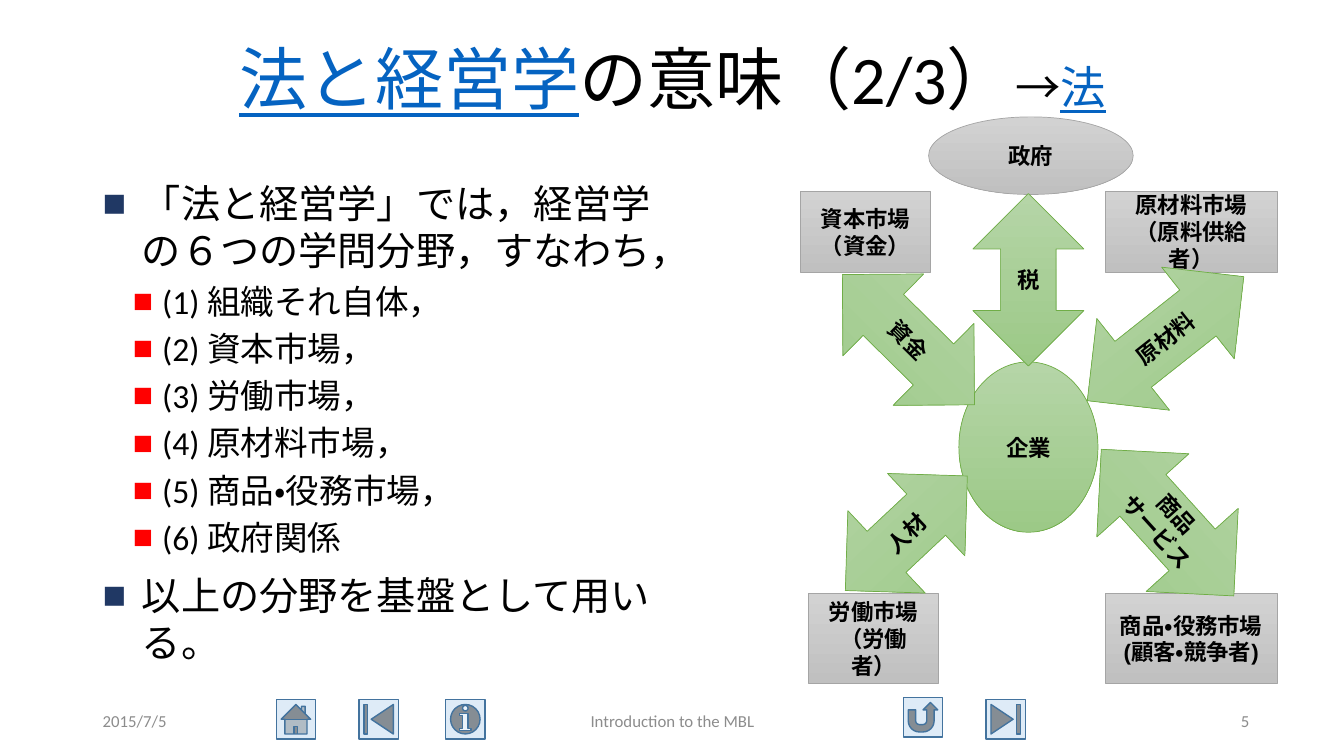
import pptx
import pptx.util
import pptx.dml.color
import pptx.enum.shapes
import pptx.enum.text
import pptx.enum.lang
import lxml.etree

RGBColor = pptx.dml.color.RGBColor
Shape = pptx.enum.shapes.MSO_SHAPE
Align = pptx.enum.text.PP_ALIGN

BLACK = RGBColor(0x00, 0x00, 0x00)
LINK_BLUE = RGBColor(0x05, 0x63, 0xC1)
FOOTER_GRAY = RGBColor(0x8C, 0x8C, 0x8C)
NAVY = RGBColor(0x20, 0x38, 0x64)
RED = RGBColor(0xFF, 0x00, 0x00)
BUTTON_FILL = RGBColor(0xDE, 0xEB, 0xF7)
BUTTON_LINE = RGBColor(0x43, 0x73, 0x9E)
# Top colour, bottom colour, outline
GRAY = (RGBColor(0xD2, 0xD2, 0xD2), RGBColor(0xC0, 0xC0, 0xC0), RGBColor(0xA5, 0xA5, 0xA5))
GREEN = (RGBColor(0xB5, 0xD5, 0xA7), RGBColor(0x9C, 0xC9, 0x87), RGBColor(0x70, 0xAD, 0x47))


class Board:
    """Style and current slide; places are in grid columns and rows."""

    cell = pptx.util.Inches(0.1)
    text_font = "Calibri"
    label_font = "Arial"

    def __init__(self, page):
        self.page = page

    def area(self, *places):
        return [round(place * self.cell) for place in places]

    def style(self, span, size, color=BLACK, name=None, bold=None):
        span.font.size = pptx.util.Pt(size)
        span.font.name = name or self.text_font
        span.font.color.rgb = color
        span.font.bold = bold
        span.font.language_id = pptx.enum.lang.MSO_LANGUAGE_ID.JAPANESE

    def text(self, place, anchor=pptx.enum.text.MSO_ANCHOR.MIDDLE):
        frame = self.page.shapes.add_textbox(*self.area(*place)).text_frame
        frame.word_wrap = True
        frame.vertical_anchor = anchor
        return frame

    def title(self, place, spans):
        para = self.text(place).paragraphs[0]
        para.alignment = Align.CENTER
        para.line_spacing = 0.9
        for words, size, linked in spans:
            span = para.add_run()
            span.text = words
            self.style(span, size, LINK_BLUE if linked else BLACK)
            span.font.underline = linked

    def footer(self, place, words, align):
        para = self.text(place).paragraphs[0]
        para.text = words
        para.alignment = align
        self.style(para.runs[0], 12, FOOTER_GRAY)

    def bullets(self, place, items):
        frame = self.text(place, pptx.enum.text.MSO_ANCHOR.TOP)
        frame.text = "\n".join(words for level, words in items)
        for para, (level, words) in zip(frame.paragraphs, items):
            size, before, margin, hang, color = (
                (24, 5, 5.9, 2.9, RED) if level else (28, 10, 3.9, 3.9, NAVY))
            para.level = level
            para.space_before = pptx.util.Pt(before)
            self.style(para.runs[0], size)
            self.bullet(para, margin, hang, color)

    def bullet(self, para, margin, hang, color):
        props = para._p.get_or_add_pPr()
        left, indent = self.area(margin, -hang)
        props.set("marL", str(left))
        props.set("indent", str(indent))
        tag = pptx.oxml.ns.qn
        holder = lxml.etree.SubElement(props, tag("a:buClr"))
        lxml.etree.SubElement(holder, tag("a:srgbClr")).set("val", str(color))
        lxml.etree.SubElement(props, tag("a:buFont")).set("typeface", self.label_font)
        lxml.etree.SubElement(props, tag("a:buChar")).set("char", "■")

    def shape(self, kind, place, line_color, line_width):
        box = self.page.shapes.add_shape(kind, *self.area(*place))
        box.shadow.inherit = False
        box.line.color.rgb = line_color
        box.line.width = pptx.util.Pt(line_width)
        return box

    def button(self, kind, column, row):
        box = self.shape(kind, (column, row, 3.9, 3.9), BUTTON_LINE, 1)
        box.fill.solid()
        box.fill.fore_color.rgb = BUTTON_FILL

    def node(self, kind, place, words, tone, turn=0):
        box = self.shape(kind, place, tone[2], 0.5)
        box.rotation = turn
        box.fill.gradient()
        box.fill.gradient_angle = 270
        for stop, color, position in zip(box.fill.gradient_stops, tone, (0, 1)):
            stop.color.rgb = color
            stop.position = position
        box.text_frame.text = words
        box.text_frame.vertical_anchor = pptx.enum.text.MSO_ANCHOR.MIDDLE
        for para in box.text_frame.paragraphs:
            para.alignment = Align.CENTER
            for span in para.runs:
                self.style(span, 16, BLACK, self.label_font, True)


deck = pptx.Presentation()
deck.slide_width = pptx.util.Inches(13.33)
deck.slide_height = pptx.util.Inches(7.5)
board = Board(deck.slides.add_slide(deck.slide_layouts[6]))

# Navigation buttons
for kind, column, row in (
    (Shape.ACTION_BUTTON_HOME, 27.4, 69.4),
    (Shape.ACTION_BUTTON_BEGINNING, 35.6, 69.4),
    (Shape.ACTION_BUTTON_INFORMATION, 44.2, 69.4),
    (Shape.ACTION_BUTTON_RETURN, 89.6, 69.2),
    (Shape.ACTION_BUTTON_END, 97.8, 69.4),
):
    board.button(kind, column, row)

# Title
board.title((9.2, 4, 115, 8.4), (
    ("法と経営学", 48.6, True),
    ("の意味（2/3）", 48.6, False),
    ("→", 32.4, False),
    ("法", 32.4, True),
))

# Body text
fields = ("組織それ自体，", "資本市場，", "労働市場，", "原材料市場，", "商品・役務市場，", "政府関係")
board.bullets((9.2, 17.3, 59.4, 48.7), [
    (0, "「法と経営学」では，経営学の６つの学問分野，すなわち，"),
    *((1, f"({number}) {field}") for number, field in enumerate(fields, 1)),
    (0, "以上の分野を基盤として用いる。"),
])

# Government, company and the four markets
board.node(Shape.OVAL, (92.1, 11.6, 20.3, 7.7), "政府", GRAY)
board.node(Shape.OVAL, (95.1, 35.9, 13.8, 16.9), "企業", GREEN)
for place, words in (
    ((79.4, 19, 12.9, 8), "資本市場\n（資金）"),
    ((80.2, 58.9, 12.9, 8.9), "労働市場\n（労働者）"),
    ((109.6, 19, 17.1, 8), "原材料市場\n（原料供給者）"),
    ((109.6, 58.9, 17.1, 8.9), "商品・役務市場\n(顧客・競争者)"),
):
    board.node(Shape.RECTANGLE, place, words, GRAY)

# Exchanges between the company and its surroundings
for place, turn, words in (
    ((80.9, 28, 18.4, 11.4), 44.6, "資金"),
    ((81.6, 47.3, 16.6, 11.2), 316.8, "人材"),
    ((105.7, 27.8, 19.8, 11.6), 321.6, "原材料"),
    ((106, 45.7, 19.6, 12.3), 47.9, "商品\vサービス"),
):
    board.node(Shape.LEFT_RIGHT_ARROW, place, words, GREEN, turn)
board.node(Shape.UP_DOWN_ARROW, (96.5, 19.2, 11, 17.1), "税", GREEN)

# Footer
board.footer((9.2, 69.5, 30, 4), "2015/7/5", Align.LEFT)
board.footer((44.2, 69.5, 45, 4), "Introduction to the MBL", Align.CENTER)
board.footer((94.9, 69.5, 30, 4), "5", Align.RIGHT)

deck.save("out.pptx")
